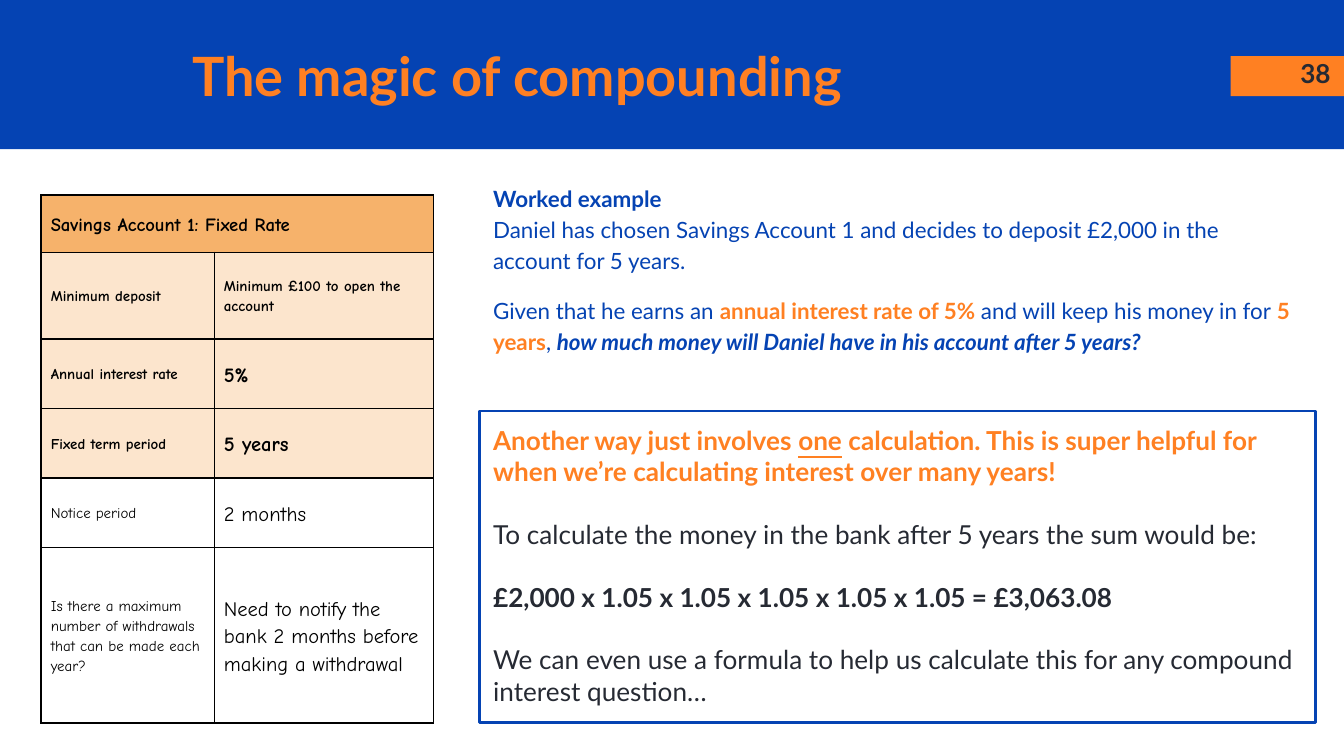
from lxml import etree
from pptx import Presentation
from pptx.dml.color import RGBColor
from pptx.enum.shapes import MSO_SHAPE
from pptx.enum.text import MSO_ANCHOR, MSO_AUTO_SIZE, PP_ALIGN
from pptx.oxml.ns import qn
from pptx.util import Cm, Pt

RECTANGLE = MSO_SHAPE.RECTANGLE
TOP, MIDDLE = MSO_ANCHOR.TOP, MSO_ANCHOR.MIDDLE
LEFT, RIGHT = PP_ALIGN.LEFT, PP_ALIGN.RIGHT
NO_AUTOFIT = MSO_AUTO_SIZE.NONE
TITLE_ONLY = 5
COLORS = {
    "blue": "0543B3", "orange": "FF8022", "ink": "262A33", "black": "000000",
    "white": "FFFFFF", "header": "F6B26B", "highlight": "FCE5CD",
}
BODY_FONT, TABLE_FONT = "Lato", "Comic Neue"


def rgb(name):
    return RGBColor.from_string(COLORS[name])


class SlideBuilder:
    def __init__(self, deck):
        self.page = deck.slides.add_slide(deck.slide_layouts[TITLE_ONLY])

    def style_run(self, span, size, color, font=BODY_FONT, bold=False,
                  italic=False, underline=False):
        span.font.name = font
        span.font.size = Pt(size)
        span.font.color.rgb = rgb(color)
        span.font.bold = bold
        span.font.italic = italic
        span.font.underline = underline

    def fill_text(self, frame, paragraphs, size, spacing=1.0, align=LEFT):
        """Fill a frame; each paragraph is (space before, [(text, style), ...])."""
        for index, (space_before, spans) in enumerate(paragraphs):
            para = frame.paragraphs[0] if index == 0 else frame.add_paragraph()
            para.alignment = align
            para.line_spacing = spacing
            para.space_before = Pt(space_before)
            for text, style in spans:
                span = para.add_run()
                span.text = text
                self.style_run(span, size, **style)

    def prepare(self, frame, anchor, left_inset=0.25):
        frame.word_wrap = True
        frame.auto_size = NO_AUTOFIT
        frame.vertical_anchor = anchor
        frame.margin_left = Cm(left_inset)
        frame.margin_right = frame.margin_top = frame.margin_bottom = Cm(0.25)

    def title(self, text, area, size, color):
        """Place the title in front of everything drawn so far."""
        box = self.page.shapes.title
        box.left, box.top, box.width, box.height = map(Cm, area)
        self.prepare(box.text_frame, MIDDLE)
        style = dict(color=color, bold=True)
        self.fill_text(box.text_frame, [(0, [(text, style)])], size)
        box.element.getparent().append(box.element)

    def rectangle(self, area, fill, line=None):
        box = self.page.shapes.add_shape(RECTANGLE, *map(Cm, area))
        box.shadow.inherit = False
        box.fill.solid()
        box.fill.fore_color.rgb = rgb(fill)
        if line:
            box.line.color.rgb = rgb(line)
            box.line.width = Pt(1.5)
        else:
            box.line.fill.background()
        self.prepare(box.text_frame, TOP)
        return box

    def text(self, area, paragraphs, size, left_inset=0.25, **layout):
        box = self.page.shapes.add_textbox(*map(Cm, area))
        self.prepare(box.text_frame, TOP, left_inset)
        self.fill_text(box.text_frame, paragraphs, size, **layout)

    def border(self, cell):
        properties = cell._tc.get_or_add_tcPr()
        for side in ("a:lnL", "a:lnR", "a:lnT", "a:lnB"):
            line = etree.SubElement(properties, qn(side), w=str(Pt(1)))
            fill = etree.SubElement(line, qn("a:solidFill"))
            etree.SubElement(fill, qn("a:srgbClr"), val=COLORS["black"])

    def cell(self, cell, text, size, fill, bold):
        self.border(cell)
        if fill:
            cell.fill.solid()
            cell.fill.fore_color.rgb = rgb(fill)
        else:
            cell.fill.background()
        cell.vertical_anchor = MIDDLE
        cell.margin_left = cell.margin_right = Cm(0.18)
        cell.margin_top = cell.margin_bottom = Cm(0.25)
        if text:
            style = dict(color="black", font=TABLE_FONT, bold=bold)
            self.fill_text(cell.text_frame, [(0, [(text, style)])], size, spacing=1.15)

    def table(self, left, top, widths, heights, rows):
        """Draw rows of (texts, sizes, fill, bold); an empty text is merged leftwards."""
        frame = self.page.shapes.add_table(
            len(rows), len(widths), Cm(left), Cm(top), Cm(sum(widths)), Cm(sum(heights)))
        table = frame.table
        table.first_row = table.horz_banding = False
        for column, width in zip(table.columns, widths):
            column.width = Cm(width)
        for row, height in zip(table.rows, heights):
            row.height = Cm(height)
        for row_index, (texts, sizes, fill, bold) in enumerate(rows):
            for column_index, (text, size) in enumerate(zip(texts, sizes)):
                cell = table.cell(row_index, column_index)
                self.cell(cell, text, size, fill, bold)
                if not text:
                    table.cell(row_index, column_index - 1).merge(cell)


def main():
    deck = Presentation()
    deck.slide_width, deck.slide_height = Cm(25.4), Cm(14.29)
    slide = SlideBuilder(deck)

    plain, strong = dict(color="blue"), dict(color="blue", bold=True)
    accent = dict(color="orange", bold=True)
    dark, dark_bold = dict(color="ink"), dict(color="ink", bold=True)

    slide.rectangle((0, 0, 25.4, 2.82), "blue")
    slide.rectangle((23.26, 1.06, 2.14, 0.76), "orange")
    slide.text((23.88, 0.84, 1.52, 1.09), [(0, [("38", dark_bold)])], 14, align=RIGHT)
    slide.title("The magic of compounding", (3.38, 0.71, 21.49, 1.42), 29, "orange")

    slide.text((8.79, 3.18, 16.08, 3.73), [
        (0, [("Worked example", strong)]),
        (0, [("Daniel has chosen Savings Account 1 and decides to deposit £2,000 "
              "in the account for 5 years.", plain)]),
        (10, [("Given that he earns an ", plain),
              ("annual interest rate of 5% ", accent),
              ("and will keep his money in for ", plain),
              ("5 years", accent),
              (", ", plain),
              ("how much money will Daniel have in his account after 5 years?",
               dict(strong, italic=True))]),
    ], 12, left_inset=0.53, spacing=1.15)

    line_gap = 16.8
    method = slide.rectangle((9.07, 7.77, 15.8, 5.89), "white", line="blue")
    slide.fill_text(method.text_frame, [
        (0, [("Another way just involves ", accent),
             ("one", dict(accent, underline=True)),
             (" calculation. This is super helpful for when we’re calculating "
              "interest over many years!", accent)]),
        (line_gap, [("To calculate the money in the bank after 5 years the sum "
                     "would be:", dark)]),
        (line_gap, [("£2,000 x 1.05 x 1.05 x 1.05 x 1.05 x 1.05 = £3,063.08", dark_bold)]),
        (line_gap, [("We can even use a formula to help us calculate this for any "
                     "compound interest question…", dark)]),
    ], 14)

    slide.table(0.78, 3.69, (3.27, 4.14), (1.08, 1.64, 1.31, 1.32, 1.31, 3.32), [
        (("Savings Account 1: Fixed Rate", ""), (10, 10), "header", True),
        (("Minimum deposit", "Minimum £100 to open the account"), (8, 8), "highlight", True),
        (("Annual interest rate", "5%"), (8, 11), "highlight", True),
        (("Fixed term period", "5 years"), (8, 11), "highlight", True),
        (("Notice period", "2 months"), (8, 11), None, False),
        (("Is there a maximum number of withdrawals that can be made each year?",
          "Need to notify the bank 2 months before making a withdrawal"),
         (8, 11), None, False),
    ])
    deck.save("out.pptx")


if __name__ == "__main__":
    main()
